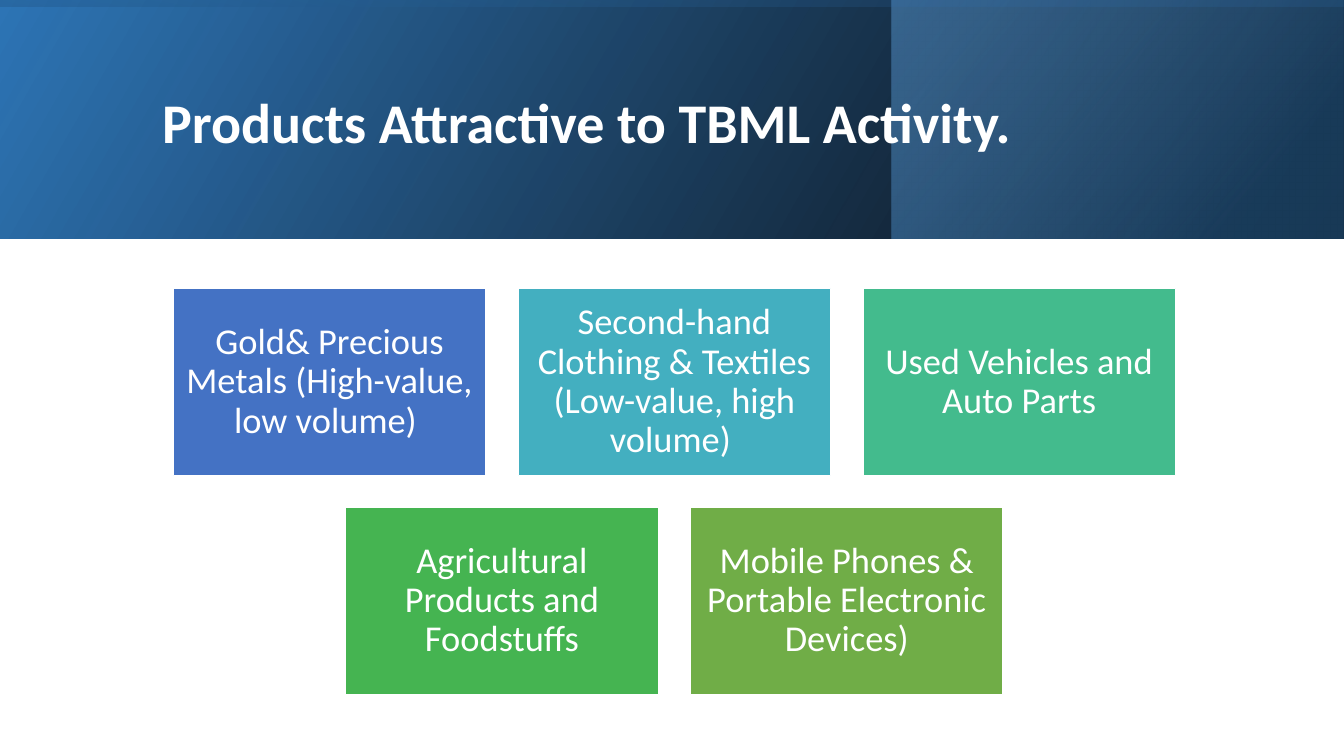
from lxml import etree
from pptx import Presentation
from pptx import util as u
from pptx.dml import color
from pptx.enum import shapes, text
from pptx.oxml import ns

FONT = "Calibri"
WHITE = "FFFFFF"
BOX_WIDTH, BOX_HEIGHT = 3.1, 1.86
COLUMN_STEP, ROW_STEP = 3.42, 2.17
GRID_CENTER, GRID_TOP = 6.69, 2.86

BANNER = [
    ((0, 0, 13.33, 2.37), 0, 330, [(0, "000000", 96), (100, "2E75B6", 100)]),
    ((8.84, 0, 4.48, 2.37), 0, 320, [(19, "1F4E79", 68), (100, "5B9BD5", 48)]),
    ((5.48, -5.48, 2.37, 13.33), 270, 350, [(23, "2E75B6", 16), (99, "000000", 45)]),
]
PRODUCT_ROWS = [
    [
        ("Gold& Precious Metals (High-value, low volume) ", "4472C4"),
        ("Second-hand Clothing & Textiles (Low-value, high volume) ", "43AFC0"),
        ("Used Vehicles and Auto Parts", "43BB8D"),
    ],
    [
        ("Agricultural Products and Foodstuffs", "45B451"),
        ("Mobile Phones & Portable Electronic Devices)", "70AD47"),
    ],
]


def rgb(value):
    return color.RGBColor.from_string(value)


def add_rectangle(slide, place):
    rectangle = slide.shapes.add_shape(
        shapes.MSO_SHAPE.RECTANGLE, *map(u.Inches, place))
    rectangle.shadow.inherit = False
    return rectangle


def write_text(shape, words, size, bold, align, inset):
    frame = shape.text_frame
    margins = ("margin_left", "margin_top", "margin_right", "margin_bottom")
    layout = {"word_wrap": True, "vertical_anchor": text.MSO_ANCHOR.MIDDLE}
    layout.update(zip(margins, map(u.Inches, inset)))
    for key, value in layout.items():
        setattr(frame, key, value)
    paragraph = frame.paragraphs[0]
    paragraph.alignment = align
    paragraph.line_spacing = 0.9
    run = paragraph.add_run()
    run.text = words
    for key, value in {"name": FONT, "size": u.Pt(size), "bold": bold}.items():
        setattr(run.font, key, value)
    run.font.color.rgb = rgb(WHITE)


def add_gradient_panel(slide, place, rotation, angle, stops):
    panel = add_rectangle(slide, place)
    panel.rotation = rotation
    panel.line.fill.background()
    panel.fill.gradient()
    properties = panel.fill._xPr
    properties.find(ns.qn("a:xfrm")).set("flipH", "1")
    gradient = properties.find(ns.qn("a:gradFill"))
    for child in list(gradient):
        gradient.remove(child)
    stop_list = etree.SubElement(gradient, ns.qn("a:gsLst"))
    for position, tone, opacity in stops:
        stop = etree.SubElement(stop_list, ns.qn("a:gs"), pos=str(position * 1000))
        shade = etree.SubElement(stop, ns.qn("a:srgbClr"), val=tone)
        etree.SubElement(shade, ns.qn("a:alpha"), val=str(opacity * 1000))
    etree.SubElement(gradient, ns.qn("a:lin"), ang=str(angle * 60000), scaled="0")


def add_title(slide, words):
    title = slide.shapes.add_textbox(*map(u.Inches, (1.51, 0.38, 10.63, 1.72)))
    write_text(title, words, 40, True, text.PP_ALIGN.LEFT, (0.1, 0.05, 0.1, 0.05))


def add_product(slide, left, top, words, tone):
    product = add_rectangle(slide, (left, top, BOX_WIDTH, BOX_HEIGHT))
    product.fill.solid()
    product.fill.fore_color.rgb = rgb(tone)
    product.line.color.rgb = rgb(WHITE)
    product.line.width = u.Pt(1)
    write_text(product, words, 26, False, text.PP_ALIGN.CENTER, (0.11,) * 4)


def main():
    deck = Presentation()
    deck.slide_width, deck.slide_height = u.Inches(13.33), u.Inches(7.5)
    slide = deck.slides.add_slide(deck.slide_layouts[6])
    for panel in BANNER:
        add_gradient_panel(slide, *panel)
    add_title(slide, "Products Attractive to TBML Activity.")
    for row, products in enumerate(PRODUCT_ROWS):
        row_width = (len(products) - 1) * COLUMN_STEP + BOX_WIDTH
        row_left = GRID_CENTER - row_width / 2
        for column, (words, tone) in enumerate(products):
            add_product(slide, row_left + column * COLUMN_STEP,
                        GRID_TOP + row * ROW_STEP, words, tone)
    deck.save("out.pptx")


if __name__ == "__main__":
    main()
